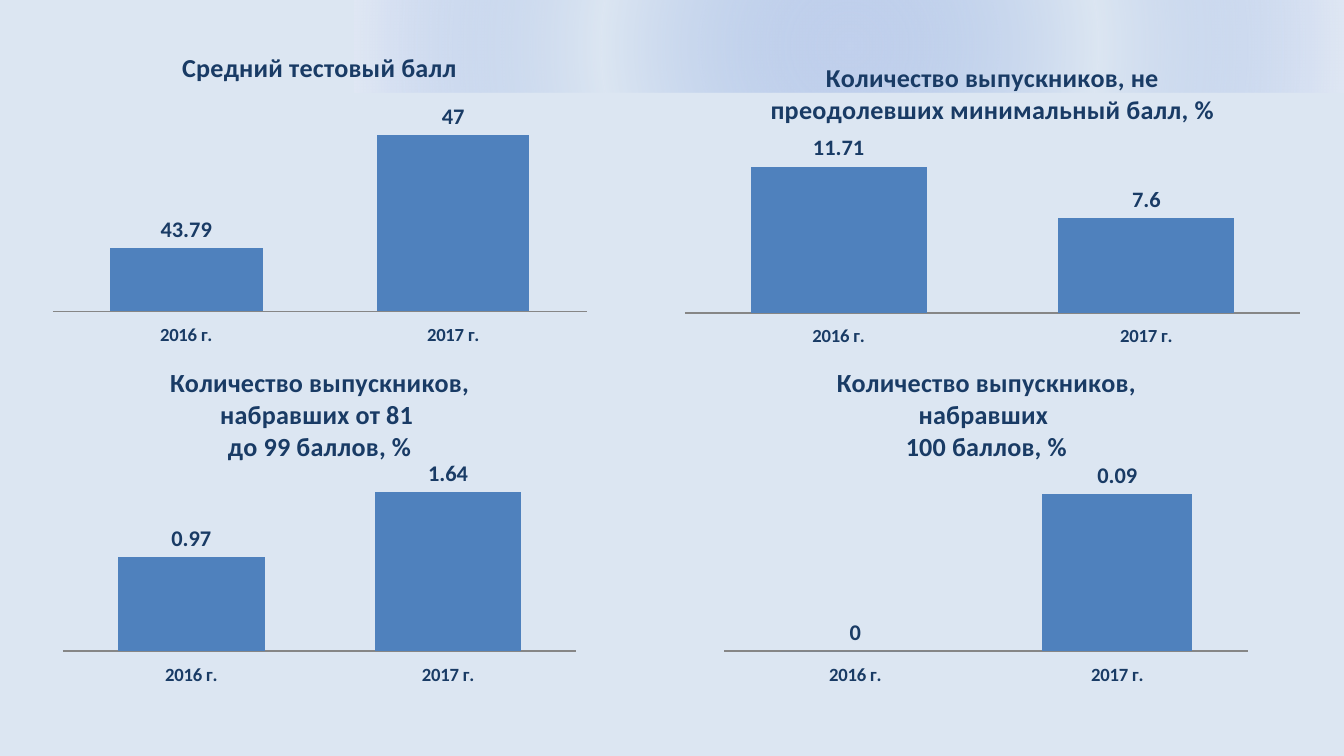
import pptx
import pptx.chart.data
import pptx.dml.color
import pptx.enum.chart
import pptx.enum.shapes
import pptx.oxml
import pptx.util
from dataclasses import dataclass

Pt = pptx.util.Pt
Rgb = pptx.dml.color.RGBColor.from_string
kinds = pptx.enum.chart


@dataclass(frozen=True)
class Theme:
    font: str = "Calibri"
    back: str = "DCE6F2"
    text: str = "193B65"
    bar: str = "4F81BD"
    line: str = "868686"
    title: int = 14
    label: int = 12
    axis: int = 10
    glow: tuple = ((0, "C2D1ED", 100), (50, "9AB5E4", 0), (100, "E1E8F5", 100))


theme = Theme()
space = ('xmlns:a="http://schemas.openxmlformats.org/drawingml/2006/main" '
         'xmlns:c="http://schemas.openxmlformats.org/drawingml/2006/chart"')


def style(font, size):
    font.name = theme.font
    font.size = Pt(size)
    font.bold = True
    font.color.rgb = Rgb(theme.text)


deck = pptx.Presentation()
deck.slide_width, deck.slide_height = Pt(720), Pt(405)
slide = deck.slides.add_slide(deck.slide_layouts[6])
slide.background.fill.solid()
slide.background.fill.fore_color.rgb = Rgb(theme.back)

# Soft glow along the top edge
glow = slide.shapes.add_shape(
    pptx.enum.shapes.MSO_SHAPE.RECTANGLE, Pt(190), Pt(0), Pt(530), Pt(49.7))
glow.shadow.inherit = False
glow.line.fill.background()
stops = "".join(
    f'<a:gs pos="{pos * 1000}"><a:srgbClr val="{color}">'
    f'<a:alpha val="{alpha * 1000}"/></a:srgbClr></a:gs>'
    for pos, color, alpha in theme.glow)
glow.element.spPr.find(pptx.oxml.ns.qn("a:prstGeom")).addnext(pptx.oxml.parse_xml(
    f'<a:gradFill {space} rotWithShape="1"><a:gsLst>{stops}</a:gsLst>'
    '<a:path path="circle"><a:fillToRect l="50000" t="50000" r="50000" b="50000"/>'
    '</a:path></a:gradFill>'))

# Box, title lines, values, axis range, top of the plot as a share of the height
charts = [
    ((22.3, 16.6, 298, 168.5), ["Средний тестовый балл"],
     (43.79, 47), (42, 48), 0.22),
    ((360, 22.3, 343.5, 163.5),
     ["Количество выпускников, не преодолевших минимальный балл, %"],
     (11.71, 7.6), (0, 14), 0.32),
    ((28, 185.8, 286.6, 181.4),
     ["Количество выпускников, набравших от 81 ", "до 99 баллов, %"],
     (0.97, 1.64), (0, 1.8), 0.385),
    ((382.3, 185.8, 292.3, 181.4),
     ["Количество выпускников, набравших ", "100 баллов, %"],
     (0, 0.09), (0, 0.1), 0.385),
]

for box, lines, values, (low, high), top in charts:
    data = pptx.chart.data.CategoryChartData()
    data.categories = ["2016 г.", "2017 г."]
    data.add_series("".join(lines), values)
    chart = slide.shapes.add_chart(
        kinds.XL_CHART_TYPE.COLUMN_CLUSTERED, *map(Pt, box), data).chart
    style(chart.font, theme.axis)
    chart.has_legend = False

    chart.has_title = True
    frame = chart.chart_title.text_frame
    for i, line in enumerate(lines):
        para = frame.add_paragraph() if i else frame.paragraphs[0]
        run = para.add_run()
        run.text = line
        style(run.font, theme.title)

    years = chart.category_axis
    years.major_tick_mark = kinds.XL_TICK_MARK.NONE
    years.tick_label_position = kinds.XL_TICK_LABEL_POSITION.LOW
    years.format.line.color.rgb = Rgb(theme.line)
    years.format.line.width = Pt(0.75)
    style(years.tick_labels.font, theme.axis)

    scale = chart.value_axis
    scale.minimum_scale, scale.maximum_scale = low, high
    scale.has_major_gridlines = False
    scale.visible = False

    plot = chart.plots[0]
    plot.gap_width = 75
    plot.vary_by_categories = False
    bars = plot.series[0]
    bars.format.fill.solid()
    bars.format.fill.fore_color.rgb = Rgb(theme.bar)
    labels = bars.data_labels
    labels.show_value = True
    labels.position = kinds.XL_LABEL_POSITION.OUTSIDE_END
    style(labels.font, theme.label)

    # Fix the plot area so that all four baselines sit at 90 % of the height
    area = chart.element.chart.plotArea
    for old in area.findall(pptx.oxml.ns.qn("c:layout")):
        area.remove(old)
    spots = (("x", 0.02), ("y", top), ("w", 0.96), ("h", 0.9 - top))
    area.insert(0, pptx.oxml.parse_xml(
        f'<c:layout {space}><c:manualLayout><c:layoutTarget val="inner"/>'
        '<c:xMode val="edge"/><c:yMode val="edge"/>'
        + "".join(f'<c:{key} val="{share:.3f}"/>' for key, share in spots)
        + '</c:manualLayout></c:layout>'))

deck.save("out.pptx")
